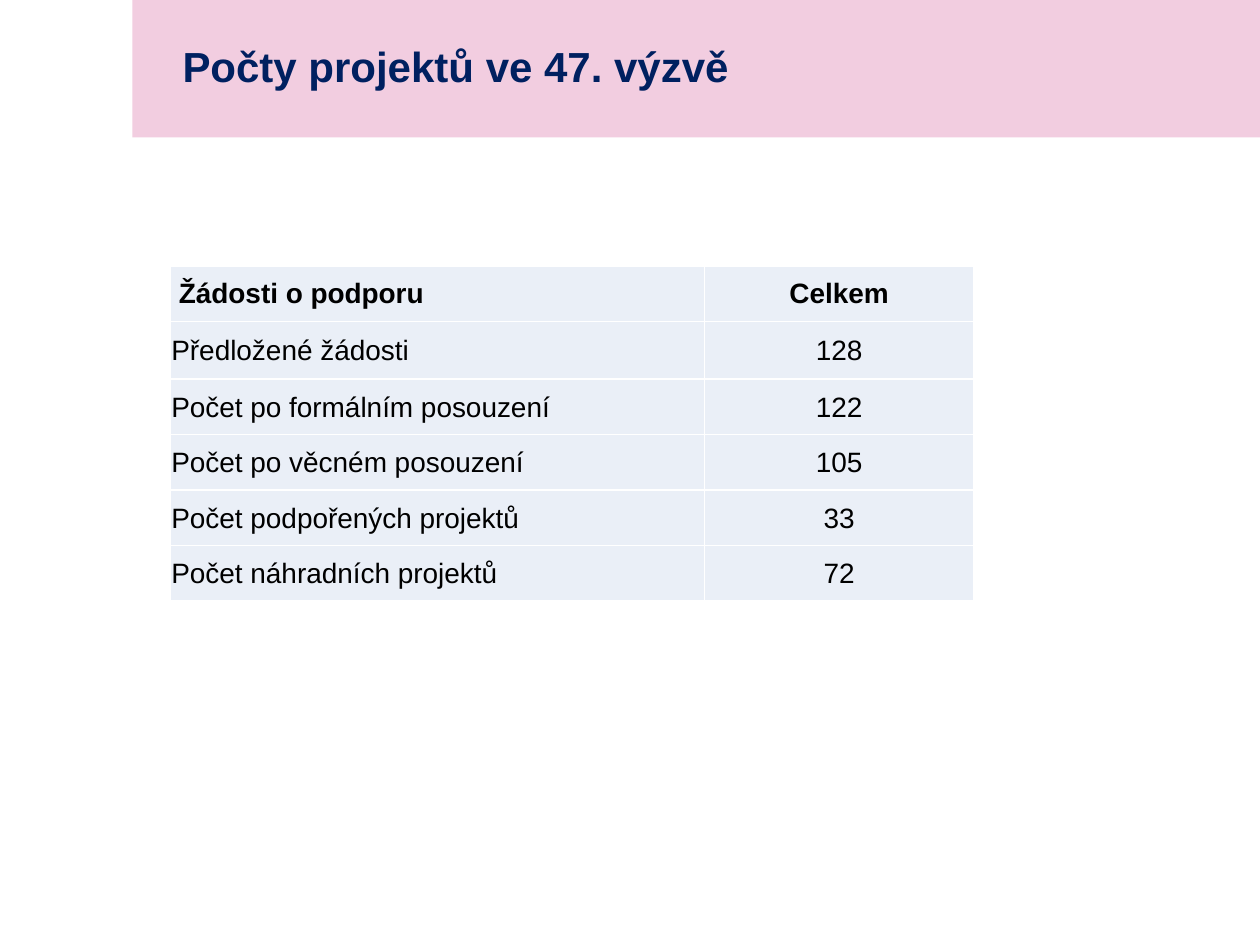
"""Build a slide with a title band and a table of project counts."""
import lxml.etree
import pptx
import pptx.dml.color
import pptx.enum.shapes
import pptx.enum.text
import pptx.oxml.ns
import pptx.util

TITLE = "Počty projektů ve 47. výzvě"
ROWS = [
    ("Žádosti o podporu", "Celkem"),
    ("Předložené žádosti", "128"),
    ("Počet po formálním posouzení", "122"),
    ("Počet po věcném posouzení", "105"),
    ("Počet podpořených projektů", "33"),
    ("Počet náhradních projektů", "72"),
]
WIDE, HIGH = 10, 7.5
BAND_X, BAND_H = 1.05, 1.09
LEFT, TOP = 1.35, 2.11
COLS = (4.24, 2.14)
ROW_H, TALL_H = 0.44, 0.46

RGB = pptx.dml.color.RGBColor
PINK = RGB(0xF2, 0xCD, 0xE0)
NAVY = RGB(0x00, 0x20, 0x60)
BLACK = RGB(0x00, 0x00, 0x00)
PALE = RGB(0xEA, 0xEF, 0xF7)
WHITE = RGB(0xFF, 0xFF, 0xFF)

Inch = pptx.util.Inches
Align = pptx.enum.text.PP_ALIGN
Anchor = pptx.enum.text.MSO_ANCHOR
qn = pptx.oxml.ns.qn


def write(frame, text, size=16, color=BLACK, bold=False, align=Align.LEFT, space=1.0):
    para = frame.paragraphs[0]
    para.alignment = align
    para.line_spacing = space
    run = para.add_run()
    run.text = text
    run.font.name = "Arial"
    run.font.size = pptx.util.Pt(size)
    run.font.bold = bold
    run.font.color.rgb = color


def edge(cell):
    props = cell._tc.get_or_add_tcPr()
    for side in ("lnL", "lnR", "lnT", "lnB"):
        line = lxml.etree.SubElement(props, qn("a:" + side), w=str(pptx.util.Pt(1)))
        fill = lxml.etree.SubElement(line, qn("a:solidFill"))
        lxml.etree.SubElement(fill, qn("a:srgbClr"), val=str(WHITE))


def add_title(slide):
    band = slide.shapes.add_shape(
        pptx.enum.shapes.MSO_SHAPE.RECTANGLE,
        Inch(BAND_X), 0, Inch(WIDE - BAND_X), Inch(BAND_H))
    band.shadow.inherit = False
    band.fill.solid()
    band.fill.fore_color.rgb = PINK
    band.line.fill.background()
    box = slide.shapes.add_textbox(Inch(LEFT), 0, Inch(8.35), Inch(BAND_H))
    box.text_frame.word_wrap = True
    box.text_frame.vertical_anchor = Anchor.MIDDLE
    write(box.text_frame, TITLE, size=24, color=NAVY, bold=True, space=0.9)


def add_counts(slide):
    highs = [TALL_H if r == 1 else ROW_H for r in range(len(ROWS))]
    table = slide.shapes.add_table(
        len(ROWS), len(COLS), Inch(LEFT), Inch(TOP),
        Inch(sum(COLS)), Inch(sum(highs))).table
    table.first_row = table.horz_banding = False
    for col, width in zip(table.columns, COLS):
        col.width = Inch(width)
    for r, row in enumerate(ROWS):
        table.rows[r].height = Inch(highs[r])
        for c, text in enumerate(row):
            cell = table.cell(r, c)
            head = r == 0
            cell.margin_left = Inch(0.07 if head and c == 0 else 0.01)
            cell.margin_right = cell.margin_top = Inch(0.01)
            cell.margin_bottom = 0
            cell.vertical_anchor = Anchor.MIDDLE
            edge(cell)
            cell.fill.solid()
            cell.fill.fore_color.rgb = PALE
            write(cell.text_frame, text, bold=head,
                  align=Align.CENTER if c else Align.LEFT)


def main():
    deck = pptx.Presentation()
    deck.slide_width, deck.slide_height = Inch(WIDE), Inch(HIGH)
    slide = deck.slides.add_slide(deck.slide_layouts[6])
    add_title(slide)
    add_counts(slide)
    deck.save("out.pptx")


if __name__ == "__main__":
    main()
